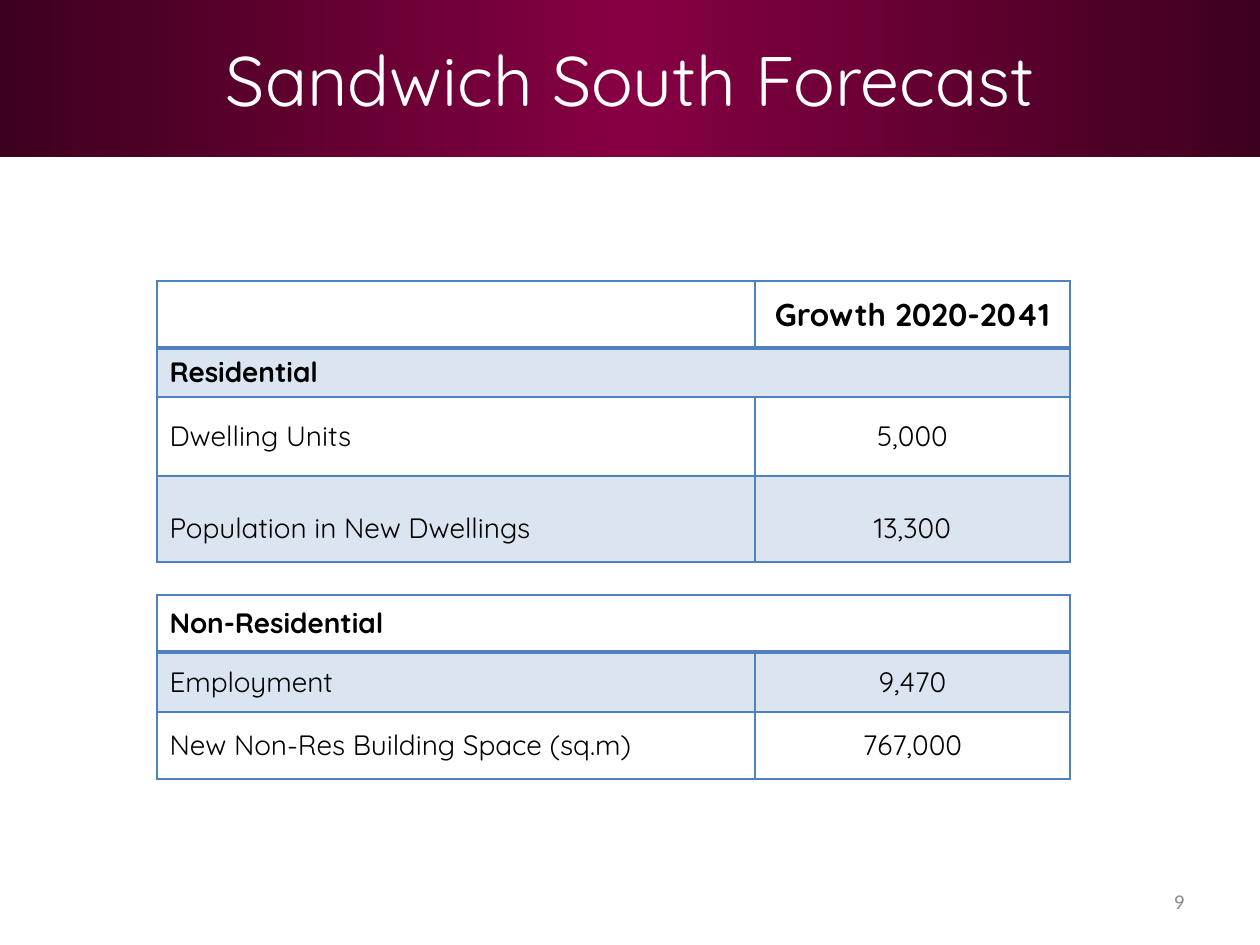
import pptx
import pptx.dml.color
import pptx.enum.shapes
import pptx.enum.text
import pptx.oxml
import pptx.oxml.ns
import pptx.util
import lxml.etree

RGB = pptx.dml.color.RGBColor
ALIGN = pptx.enum.text.PP_ALIGN
MIDDLE = pptx.enum.text.MSO_ANCHOR.MIDDLE

PX = 914400 / 126  # EMU per px
WHITE = RGB(0xFF, 0xFF, 0xFF)
BLACK = RGB(0, 0, 0)
GREY = RGB(0x8C, 0x8C, 0x8C)
BLUE = RGB(0x4F, 0x81, 0xBD)
MAROON = RGB(0x86, 0x00, 0x43)
DARK_MAROON = RGB(0x3D, 0x00, 0x1E)

LABEL = {"name": "Quicksand", "size": pptx.util.Pt(16), "bold": False}
SECTION = {**LABEL, "bold": True}
HEADING = {**SECTION, "size": pptx.util.Pt(18)}
TITLE = {**LABEL, "size": pptx.util.Pt(40)}
PAGE = {"name": "Calibri", "size": pptx.util.Pt(12)}

COLUMNS = (598, 315)


def emu(*lengths):
    return [round(length * PX) for length in lengths]


def write(frame, text, style, colour, align, spacing=None):
    paragraph = frame.paragraphs[0]
    paragraph.text = text
    paragraph.alignment = align
    if spacing:
        paragraph.line_spacing = spacing
    for key, value in style.items():
        setattr(paragraph.font, key, value)
    paragraph.font.color.rgb = colour


def text_box(slide, box, text, style, colour, align):
    frame = slide.shapes.add_textbox(*emu(*box)).text_frame
    frame.word_wrap = True
    frame.vertical_anchor = MIDDLE
    write(frame, text, style, colour, align)


def add_banner(slide, box, title):
    band = slide.shapes.add_shape(
        pptx.enum.shapes.MSO_SHAPE.RECTANGLE, *emu(*box))
    band.shadow.inherit = False
    band.line.fill.background()
    band.fill.gradient()
    band.fill.gradient_angle = 0
    # Dark ends with a bright centre
    stops = band.fill.gradient_stops
    for stop, position in zip(stops, (0, 1)):
        stop.color.rgb = DARK_MAROON
        stop.position = position
    stop_list = band.element.spPr.find(".//" + pptx.oxml.ns.qn("a:gsLst"))
    stop_list.insert(1, pptx.oxml.parse_xml(
        f'<a:gs {pptx.oxml.ns.nsdecls("a")} pos="50000">'
        f'<a:srgbClr val="{MAROON}"/></a:gs>'))
    text_box(slide, box, title, TITLE, WHITE, ALIGN.CENTER)


def set_borders(cell, top, bottom):
    properties = cell._tc.get_or_add_tcPr()
    for side, points in zip("LRTB", (1, 1, top, bottom)):
        properties.append(pptx.oxml.parse_xml(
            f'<a:ln{side} {pptx.oxml.ns.nsdecls("a")} w="{points * 12700}">'
            f'<a:solidFill><a:srgbClr val="{BLUE}"/></a:solidFill>'
            f'</a:ln{side}>'))


def set_fill(cell, tinted):
    if not tinted:
        cell.fill.background()
        return
    cell.fill.solid()
    cell.fill.fore_color.rgb = BLUE
    colour = cell._tc.tcPr.find(pptx.oxml.ns.qn("a:solidFill"))[0]
    lxml.etree.SubElement(colour, pptx.oxml.ns.qn("a:alpha"), val="20000")


def add_forecast(slide, left, top, rows):
    """Each row: height, label, value, style, line spacing."""
    box = (left, top, sum(COLUMNS), sum(row[0] for row in rows))
    table = slide.shapes.add_table(len(rows), 2, *emu(*box)).table
    table.first_row = table.horz_banding = False
    for column, width in zip(table.columns, emu(*COLUMNS)):
        column.width = width
    for index, (height, label, value, style, spacing) in enumerate(rows):
        table.rows[index].height = emu(height)[0]
        for column, text in enumerate((label, value)):
            cell = table.cell(index, column)
            # The rule below the first row is heavier
            set_borders(cell, 2 if index == 1 else 1, 2 if index == 0 else 1)
            set_fill(cell, index % 2 == 1)
            cell.vertical_anchor = MIDDLE
            if text:
                align = ALIGN.CENTER if column else ALIGN.LEFT
                write(cell.text_frame, text, style, BLACK, align, spacing)
        if style is SECTION:
            table.cell(index, 0).merge(table.cell(index, 1))


def main():
    deck = pptx.Presentation()
    deck.slide_width, deck.slide_height = emu(1260, 945)
    slide = deck.slides.add_slide(deck.slide_layouts[6])

    add_banner(slide, (0, 0, 1260, 157), "Sandwich South Forecast")

    # Residential and non-residential growth
    add_forecast(slide, 157, 281, [
        (67, "", "Growth 2020-2041", HEADING, None),
        (49, "Residential", "", SECTION, None),
        (79, "Dwelling Units", "5,000", LABEL, None),
        (86, "Population in New Dwellings", "13,300", LABEL, 1.5),
    ])
    add_forecast(slide, 157, 595, [
        (57, "Non-Residential", "", SECTION, None),
        (60, "Employment", "9,470", LABEL, None),
        (67, "New Non-Res Building Space (sq.m)", "767,000", LABEL, None),
    ])

    # Page number
    text_box(slide, (903, 876, 294, 50), "9", PAGE, GREY, ALIGN.RIGHT)

    deck.save("out.pptx")


if __name__ == "__main__":
    main()
